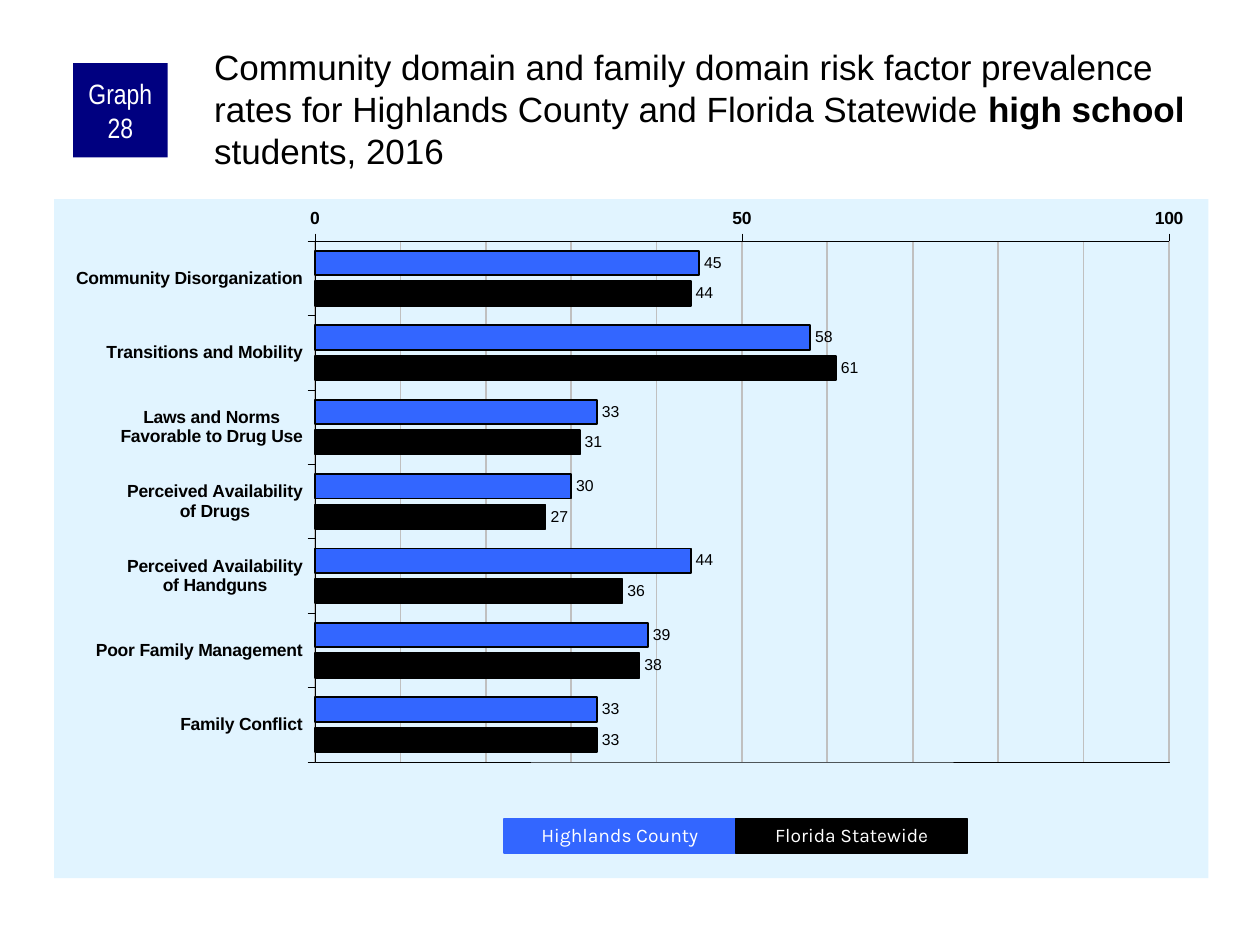
from lxml.etree import SubElement
from pptx import Presentation
from pptx.chart.data import CategoryChartData
from pptx.dml.color import RGBColor
from pptx.enum.chart import XL_AXIS_CROSSES as Cross, XL_CHART_TYPE as Kind
from pptx.enum.chart import XL_LABEL_POSITION as Spot, XL_TICK_MARK as Tick
from pptx.enum.shapes import MSO_SHAPE as Form
from pptx.enum.text import MSO_ANCHOR as Anchor, MSO_AUTO_SIZE as Fit, PP_ALIGN as Align
from pptx.oxml import parse_xml
from pptx.oxml.ns import nsdecls, qn
from pptx.util import Inches, Pt

COLORS = {
    "black": "000000",
    "white": "FFFFFF",
    "navy": "000080",
    "blue": "3366FF",
    "panel": "E1F4FF",
    "grid": "C0C0C0",
}
RATES = [
    ("Community Disorganization", 45, 44),
    ("Transitions and Mobility", 58, 61),
    ("Laws and Norms\nFavorable to Drug Use", 33, 31),
    ("Perceived Availability\nof Drugs", 30, 27),
    ("Perceived Availability\nof Handguns", 44, 36),
    ("Poor Family Management", 39, 38),
    ("Family Conflict", 33, 33),
]
GROUPS = [("Highlands County", "blue"), ("Florida Statewide", "black")]
PLOT = {"x": 0.226, "y": 0.062, "w": 0.74, "h": 0.767}


def rgb(name):
    return RGBColor.from_string(COLORS[name])


def set_font(font, size, color="black", face="Arial", bold=None):
    font.size = Pt(size)
    font.name = face
    font.color.rgb = rgb(color)
    font.bold = bold


def set_fill(fill, color):
    fill.solid()
    fill.fore_color.rgb = rgb(color)


def set_line(line, color, width):
    line.color.rgb = rgb(color)
    line.width = Pt(width)


def add_box(slide, text, color, area, size, face):
    box = slide.shapes.add_shape(Form.RECTANGLE, *map(Inches, area))
    box.shadow.inherit = False
    set_fill(box.fill, color)
    box.line.fill.background()
    frame = box.text_frame
    frame.word_wrap = True
    frame.vertical_anchor = Anchor.MIDDLE
    frame.text = text
    para = frame.paragraphs[0]
    para.alignment = Align.CENTER
    set_font(para.font, size, "white", face)
    return box


def add_badge(slide):
    box = add_box(slide, "Graph 28", "navy", (0.58, 0.5, 0.75, 0.75), 16, "Arial Narrow")
    frame = box.text_frame
    frame.margin_left = frame.margin_right = Inches(0.05)
    frame.margin_top = frame.margin_bottom = 0


def add_title(slide):
    area = map(Inches, (1.67, 0.33, 7.92, 0.83))
    frame = slide.shapes.add_textbox(*area).text_frame
    frame.word_wrap = True
    frame.margin_left = frame.margin_top = Inches(0.03)
    frame.margin_right = frame.margin_bottom = 0
    para = frame.paragraphs[0]
    set_font(para.font, 20)
    para.add_run().text = (
        "Community domain and family domain risk factor prevalence "
        "rates for Highlands County and Florida Statewide "
    )
    bold = para.add_run()
    bold.text = "high school"
    bold.font.bold = True
    para.add_run().text = " students, 2016"


def add_legend(slide):
    wide = 1.84
    for i, (name, color) in enumerate(GROUPS):
        area = (4 + i * wide, 6.5, wide, 0.27)
        box = add_box(slide, name, color, area, 11, "Karla")
        set_line(box.line, color, 0.75)
        box.text_frame.auto_size = Fit.SHAPE_TO_FIT_TEXT
        box.text_frame.paragraphs[0].line_spacing = 0.9


def set_axes(chart):
    cat, val = chart.category_axis, chart.value_axis
    for axis in (cat, val):
        axis.major_tick_mark = Tick.OUTSIDE
        axis.minor_tick_mark = Tick.NONE
        set_font(axis.tick_labels.font, 10, bold=True)
        set_line(axis.format.line, "black", 0.25)
    cat.reverse_order = True
    cat.crosses = Cross.MAXIMUM
    val.minimum_scale, val.maximum_scale = 0, 100
    val.major_unit, val.minor_unit = 50, 10
    val.has_major_gridlines = val.has_minor_gridlines = True
    set_line(val.major_gridlines.format.line, "grid", 1)
    minor = next(chart.element.iter(qn("c:minorGridlines")))
    minor.append(make_style("", paint("grid"), 1))


def set_bars(plot):
    plot.gap_width = 80
    plot.overlap = -25
    plot.vary_by_categories = False
    for bars, (_, color) in zip(plot.series, GROUPS):
        set_fill(bars.format.fill, color)
        set_line(bars.format.line, "black", 1)
        bars.invert_if_negative = False
        labels = bars.data_labels
        labels.show_value = True
        labels.position = Spot.OUTSIDE_END
        set_font(labels.font, 9)


def make_style(fill, line, width=0.25):
    return parse_xml(
        f"<c:spPr {nsdecls('c', 'a')}>{fill}<a:ln w='{Pt(width)}'>{line}</a:ln></c:spPr>"
    )


def paint(name):
    return f"<a:solidFill><a:srgbClr val='{COLORS[name]}'/></a:solidFill>"


def set_frame(chart):
    body = chart.element.find(qn("c:chart"))
    area = body.find(qn("c:plotArea"))
    for old in area.findall(qn("c:layout")):
        area.remove(old)
    layout = parse_xml(f"<c:layout {nsdecls('c')}/>")
    manual = SubElement(layout, qn("c:manualLayout"))
    rules = {"layoutTarget": "inner", "xMode": "edge", "yMode": "edge", **PLOT}
    for tag, value in rules.items():
        SubElement(manual, qn(f"c:{tag}")).set("val", str(value))
    area.insert(0, layout)
    area.append(make_style("<a:noFill/>", paint("black")))
    body.addnext(make_style(paint("panel"), "<a:noFill/>"))


def add_rates(slide):
    names, *values = zip(*RATES)
    data = CategoryChartData()
    data.categories = names
    for (name, _), nums in zip(GROUPS, values):
        data.add_series(name, nums)
    area = map(Inches, (0.43, 1.58, 9.16, 5.39))
    chart = slide.shapes.add_chart(Kind.BAR_CLUSTERED, *area, data).chart
    chart.has_title = chart.has_legend = False
    set_font(chart.font, 11.8)
    set_axes(chart)
    set_bars(chart.plots[0])
    set_frame(chart)


def main():
    deck = Presentation()
    deck.slide_width, deck.slide_height = Inches(10), Inches(7.5)
    slide = deck.slides.add_slide(deck.slide_layouts[6])
    add_rates(slide)
    add_badge(slide)
    add_title(slide)
    add_legend(slide)
    deck.save("out.pptx")


if __name__ == "__main__":
    main()
